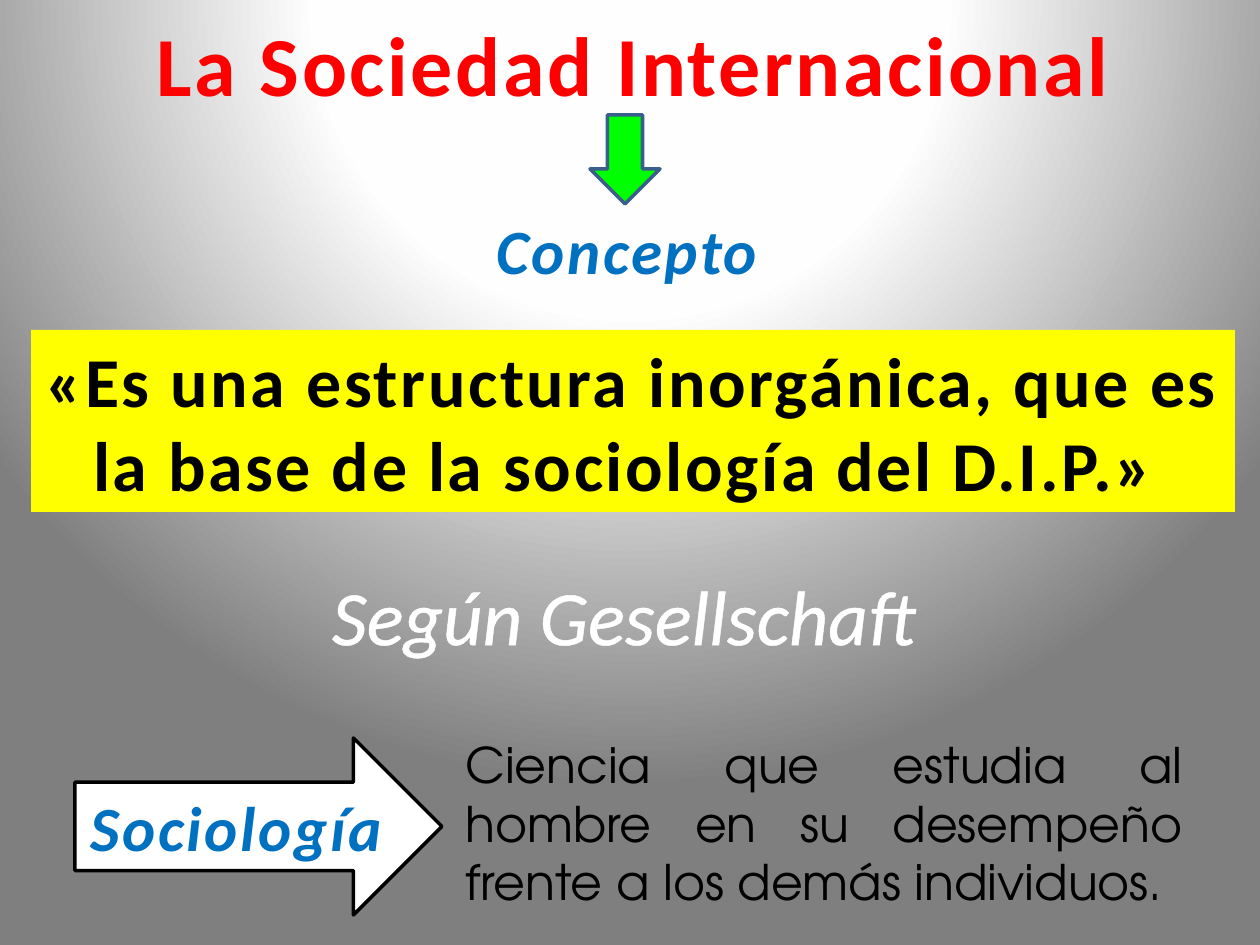
import pptx
import pptx.dml.color
import pptx.enum.shapes
import pptx.enum.text
import pptx.oxml
import pptx.oxml.ns
import pptx.util

SHAPE = pptx.enum.shapes.MSO_SHAPE
ALIGN = pptx.enum.text.PP_ALIGN
NS = pptx.oxml.ns.nsdecls("a")


class Theme:
    """Colours, fonts and text formats of the slide."""
    white, black, red, blue = "FFFFFF", "000000", "FF0000", "0070C0"
    yellow, green, edge = "FFFF00", "00FF00", "3A5F8C"
    stops = ((0, "FFFFFF"), (40, "FEFEFE"), (100, "7F7F7F"))
    title = dict(name="Calibri", size=48, bold=True, color=red, spc=150)
    term = dict(name="Calibri", size=36, bold=True, italic=True, color=blue, spc=150)
    quote = dict(name="Calibri", size=40, bold=True, color=black, spc=150)
    author = dict(name="Calibri", size=44, italic=True, color=white, outline=1.45)
    body = dict(name="TeX Gyre Adventor", size=28, color=black)


def px(n):
    """Turn pixels into EMU."""
    return pptx.util.Inches(n / 126)


def rgb(color):
    """Turn a hex string into a colour."""
    return pptx.dml.color.RGBColor.from_string(color)


def write(sp, text, fmt, align=ALIGN.CENTER, wrap=False):
    """Write one formatted paragraph into a shape."""
    fmt = dict(fmt)
    color, spc, outline = fmt.pop("color"), fmt.pop("spc", 0), fmt.pop("outline", 0)
    fmt["size"] = pptx.util.Pt(fmt["size"])
    tf = sp.text_frame
    tf.word_wrap = wrap
    p = tf.paragraphs[0]
    p.alignment = align
    r = p.add_run()
    r.text = text
    for key, value in fmt.items():
        setattr(r.font, key, value)
    r.font.fill.solid()
    r.font.fill.fore_color.rgb = rgb(color)
    rpr = r.font._element
    if spc:
        rpr.set("spc", str(spc))
    if outline:
        rpr.insert(0, pptx.oxml.parse_xml(
            f'<a:ln {NS} w="{pptx.util.Pt(outline)}"><a:solidFill>'
            f'<a:srgbClr val="{color}"/></a:solidFill></a:ln>'))


def add_text(s, box, *args, **kwargs):
    """Add a text box."""
    write(s.shapes.add_textbox(*map(px, box)), *args, **kwargs)


def add_block(s, kind, box, fill, line=None):
    """Add a filled preset shape, outlined if a line colour is given."""
    sp = s.shapes.add_shape(kind, *map(px, box))
    sp.shadow.inherit = False
    sp.fill.solid()
    sp.fill.fore_color.rgb = rgb(fill)
    if line:
        sp.line.color.rgb = rgb(line)
        sp.line.width = pptx.util.Pt(2)
    else:
        sp.line.fill.background()
    return sp


def paint_background(s):
    """Fill the background with a circular gradient."""
    s.background.fill.solid()
    bg = s.element.find(".//" + pptx.oxml.ns.qn("p:bgPr"))
    stops = "".join(f'<a:gs pos="{pos * 1000}"><a:srgbClr val="{color}"/></a:gs>'
                    for pos, color in Theme.stops)
    bg.replace(bg[0], pptx.oxml.parse_xml(
        f'<a:gradFill {NS} rotWithShape="1"><a:gsLst>{stops}</a:gsLst>'
        '<a:path path="circle"><a:fillToRect l="50000" t="-80000" r="50000" b="180000"/>'
        '</a:path></a:gradFill>'))


def heading(s, x, y, w):
    """Place the title, the down arrow and the term."""
    add_text(s, (x, y, w, 115), "La Sociedad Internacional", Theme.title)
    add_text(s, (x + 354, y + 199, 292, 90), "Concepto", Theme.term)
    add_block(s, SHAPE.DOWN_ARROW, (x + 463, y + 109, 70, 89), Theme.green, Theme.edge)


def definition(s, x, y, w):
    """Place the quoted definition and its author."""
    sp = add_block(s, SHAPE.RECTANGLE, (x, y, w, 182), Theme.yellow)
    write(sp, "«Es una estructura inorgánica, que es la base de la sociología del D.I.P.» ",
          Theme.quote, wrap=True)
    add_text(s, (x + 285, y + 232, 616, 106), "Según Gesellschaft", Theme.author)


def explanation(s, x, y, w):
    """Place the labelled arrow and the text it points to."""
    sp = add_block(s, SHAPE.RIGHT_ARROW, (x, y + 10, 367, 177), Theme.white, Theme.black)
    write(sp, "Sociología", Theme.term)
    add_text(s, (x + 378, y, w - 378, 190),
             "Ciencia que estudia al hombre en su desempeño frente a los demás individuos.",
             Theme.body, align=ALIGN.JUSTIFY, wrap=True)


def main():
    """Build and save the slide."""
    prs = pptx.Presentation()
    prs.slide_width, prs.slide_height = px(1260), px(945)
    s = prs.slides.add_slide(prs.slide_layouts[6])
    paint_background(s)
    heading(s, 127, 6, 1013)
    definition(s, 31, 330, 1204)
    explanation(s, 75, 728, 1120)
    prs.save("out.pptx")


if __name__ == "__main__":
    main()
